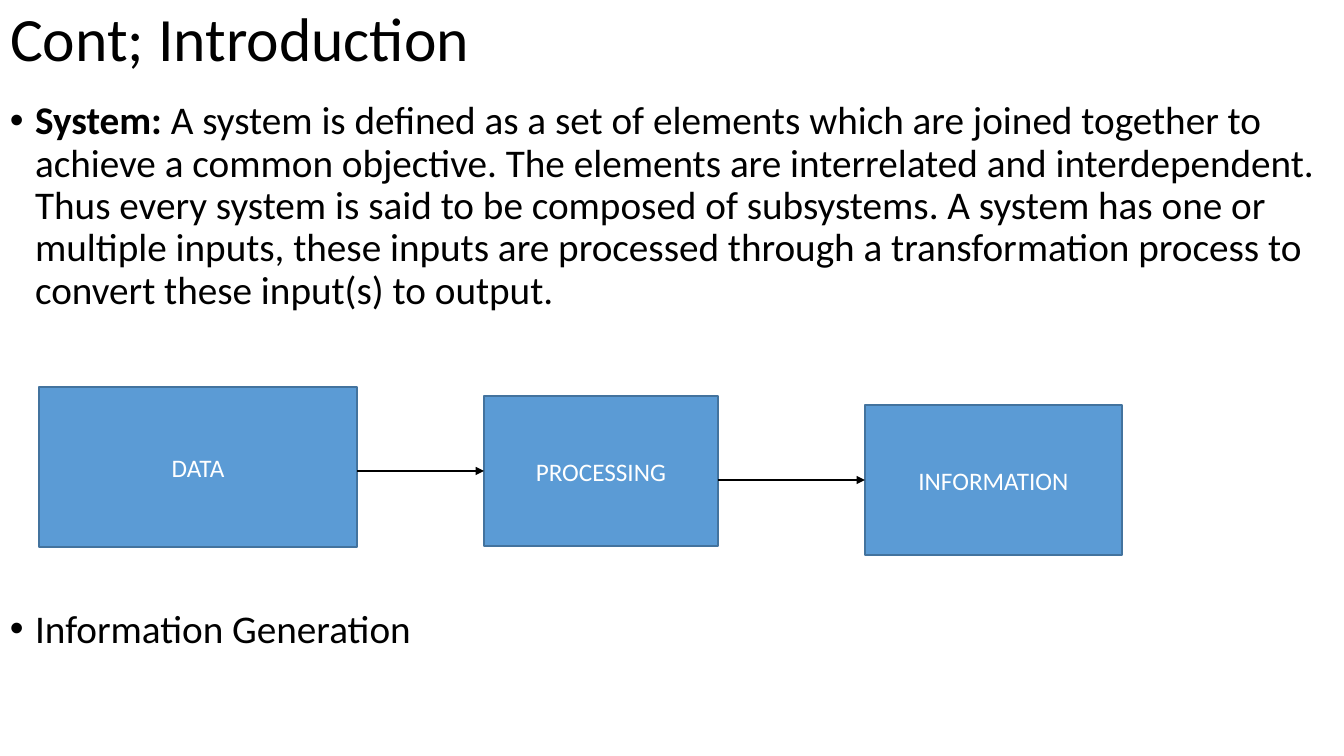
from lxml import etree
from pptx import Presentation
from pptx import util as u
from pptx.dml.color import RGBColor
from pptx.enum import shapes, text
from pptx.oxml.ns import qn

PX = 914400 / 100.8
THEME = {
    "font": "Calibri",
    "ink": RGBColor.from_string("000000"),
    "paper": RGBColor.from_string("FFFFFF"),
    "box": RGBColor.from_string("5B9BD5"),
    "edge": RGBColor.from_string("43739E"),
    "title": u.Pt(44),
    "body": u.Pt(28),
    "label": u.Pt(18),
}


def px(*lengths):
    return [u.Emu(round(length * PX)) for length in lengths]


def add_span(para, words, size, color, bold=False):
    span = para.add_run()
    span.text = words
    span.font.name = THEME["font"]
    span.font.size = THEME[size]
    span.font.bold = bold
    span.font.color.rgb = THEME[color]


deck = Presentation()
deck.slide_width, deck.slide_height = px(1344, 756)
page = deck.slides.add_slide(deck.slide_layouts[5])

title = page.shapes.title
title.left, title.top, title.width, title.height = px(0, 2, 1344, 79)
title.text_frame.auto_size = text.MSO_AUTO_SIZE.NONE
title.text_frame.vertical_anchor = text.MSO_ANCHOR.MIDDLE
para = title.text_frame.paragraphs[0]
para.alignment = text.PP_ALIGN.LEFT
para.line_spacing = 0.9
add_span(para, "Cont; Introduction", "title", "ink")

body = page.shapes.add_textbox(*px(0, 96, 1344, 660)).text_frame
body.word_wrap = True
bullets = [
    (0, [
        ("System: ", True),
        ("A system is defined as a set of elements which are joined together to "
         "achieve a common objective. The elements are interrelated and interdependent. "
         "Thus every system is said to be composed of subsystems. A system has one or "
         "multiple inputs, these inputs are processed through a transformation process to "
         "convert these input(s) to output.", False),
    ]),
    (212, [("Information Generation", False)]),
]
for index, (gap, spans) in enumerate(bullets):
    para = body.add_paragraph() if index else body.paragraphs[0]
    para.line_spacing = 0.9
    para.space_before = u.Pt(gap)
    props = para._p.get_or_add_pPr()
    props.set("marL", str(u.Inches(0.25)))
    props.set("indent", str(-u.Inches(0.25)))
    etree.SubElement(props, qn("a:buFont")).set("typeface", "Arial")
    etree.SubElement(props, qn("a:buChar")).set("char", "•")
    for words, bold in spans:
        add_span(para, words, "body", "ink", bold)

stages = [
    ("DATA", 39, 387, 318, 160),
    ("PROCESSING", 484, 396, 234, 150),
    ("INFORMATION", 865, 405, 257, 150),
]
boxes = []
for label, *place in stages:
    box = page.shapes.add_shape(shapes.MSO_SHAPE.RECTANGLE, *px(*place))
    box.shadow.inherit = False
    box.fill.solid()
    box.fill.fore_color.rgb = THEME["box"]
    box.line.color.rgb = THEME["edge"]
    box.line.width = u.Pt(1)
    box.text_frame.vertical_anchor = text.MSO_ANCHOR.MIDDLE
    para = box.text_frame.paragraphs[0]
    para.alignment = text.PP_ALIGN.CENTER
    add_span(para, label, "label", "paper")
    boxes.append(box)

for source, target in zip(boxes, boxes[1:]):
    middle = target.top + target.height // 2
    arrow = page.shapes.add_connector(
        shapes.MSO_CONNECTOR.STRAIGHT,
        source.left + source.width, middle, target.left, middle)
    arrow.end_connect(target, 1)
    arrow.line.color.rgb = THEME["ink"]
    arrow.line.width = u.Pt(1.5)
    etree.SubElement(arrow.line._get_or_add_ln(), qn("a:tailEnd")).set("type", "triangle")
    etree.SubElement(arrow._element.spPr, qn("a:effectLst"))

deck.save("out.pptx")
